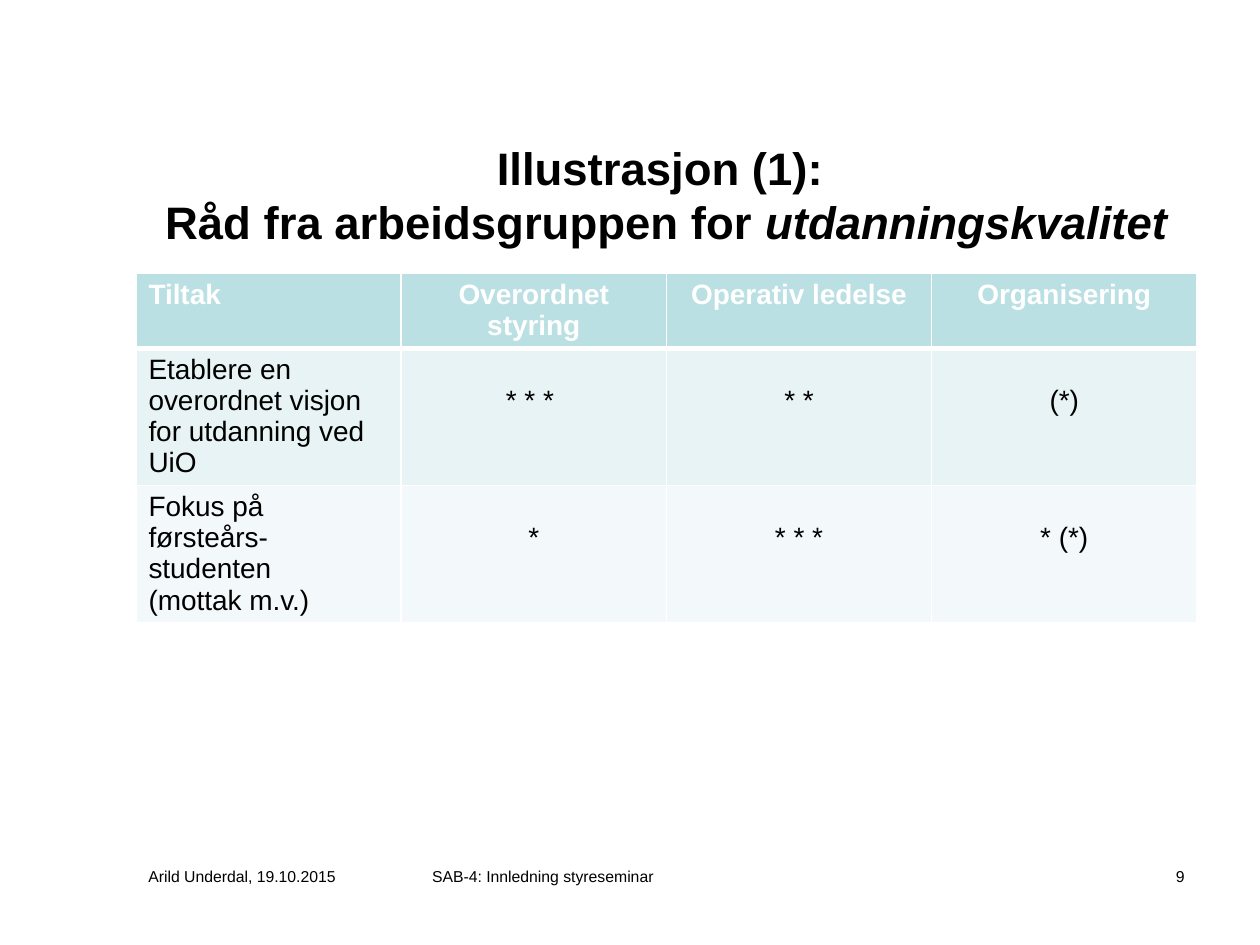
from dataclasses import dataclass

from lxml.etree import SubElement
from pptx import Presentation
from pptx.dml.color import RGBColor
from pptx.enum.text import MSO_ANCHOR, MSO_AUTO_SIZE, PP_ALIGN
from pptx.oxml.ns import qn
from pptx.slide import Slide
from pptx.table import _Cell
from pptx.text.text import _Paragraph
from pptx.util import Cm, Pt


@dataclass(frozen=True)
class Theme:
    font: str = "Arial"
    text: str = "000000"
    white: str = "FFFFFF"
    header: str = "BBE0E3"
    bands: tuple[str, str] = ("E7F3F4", "F3F9FA")
    title_size: int = 26
    table_size: int = 16
    footer_size: int = 9
    thin_border: int = 1
    thick_border: int = 3


@dataclass(frozen=True)
class FooterItem:
    text: str
    left: float
    width: float
    alignment: PP_ALIGN = PP_ALIGN.LEFT


@dataclass(frozen=True)
class Measure:
    name: str
    ratings: tuple[str, str, str]


THEME = Theme()
LEFT = 2.74
WIDTH = 21.39
HEADINGS = ("Tiltak", "Overordnet styring", "Operativ ledelse", "Organisering")
MEASURES = (
    Measure("Etablere en overordnet visjon for utdanning ved UiO", ("* * * ", "* *", "(*)")),
    Measure("Fokus på førsteårs-studenten\n(mottak m.v.)", ("*", "* * *", "* (*)")),
)
FOOTER = (
    FooterItem("Arild Underdal, 19.10.2015", LEFT, 5.28),
    FooterItem("SAB-4: Innledning styreseminar", 8.46, 13.34),
    FooterItem("9", 22.23, 1.9, PP_ALIGN.RIGHT),
)


def add_run(
    paragraph: _Paragraph,
    text: str,
    size: int,
    color: str = THEME.text,
    bold: bool = False,
    italic: bool = False,
) -> None:
    run = paragraph.add_run()
    run.text = text
    run.font.name = THEME.font
    run.font.size = Pt(size)
    run.font.bold = bold
    run.font.italic = italic
    run.font.color.rgb = RGBColor.from_string(color)


def add_title(slide: Slide) -> None:
    title = slide.shapes.title
    title.left, title.top, title.width, title.height = Cm(LEFT), Cm(2.33), Cm(WIDTH), Cm(3.18)
    frame = title.text_frame
    frame.auto_size = MSO_AUTO_SIZE.NONE
    frame.vertical_anchor = MSO_ANCHOR.MIDDLE
    paragraph = frame.paragraphs[0]
    paragraph.alignment = PP_ALIGN.CENTER
    add_run(paragraph, "Illustrasjon (1): ", THEME.title_size, bold=True)
    paragraph.add_line_break()
    add_run(paragraph, "Råd fra arbeidsgruppen for ", THEME.title_size, bold=True)
    add_run(paragraph, "utdanningskvalitet", THEME.title_size, bold=True, italic=True)


def set_borders(cell: _Cell, top: int, bottom: int) -> None:
    properties = cell._tc.get_or_add_tcPr()
    widths = {"a:lnL": THEME.thin_border, "a:lnR": THEME.thin_border, "a:lnT": top, "a:lnB": bottom}
    for position, (tag, width) in enumerate(widths.items()):
        line = SubElement(properties, qn(tag), w=str(Pt(width)))
        fill = SubElement(line, qn("a:solidFill"))
        SubElement(fill, qn("a:srgbClr"), val=THEME.white)
        properties.insert(position, line)


def fill_cell(cell: _Cell, text: str, row: int, column: int) -> None:
    is_header = row == 0
    cell.fill.solid()
    background = THEME.header if is_header else THEME.bands[(row - 1) % 2]
    cell.fill.fore_color.rgb = RGBColor.from_string(background)
    set_borders(
        cell,
        top=THEME.thick_border if row == 1 else THEME.thin_border,
        bottom=THEME.thick_border if is_header else THEME.thin_border,
    )
    if not is_header and column > 0:
        cell.margin_top = Cm(0.75)
    paragraph = cell.text_frame.paragraphs[0]
    paragraph.alignment = PP_ALIGN.CENTER if column else PP_ALIGN.LEFT
    color = THEME.white if is_header else THEME.text
    for index, line in enumerate(text.split("\n")):
        if index:
            paragraph.add_line_break()
        add_run(paragraph, line, THEME.table_size, color, bold=is_header)


def add_measures_table(slide: Slide) -> None:
    rows = [HEADINGS, *((measure.name, *measure.ratings) for measure in MEASURES)]
    heights = (1.5, 2.75, 2.75)
    shape = slide.shapes.add_table(
        len(rows), len(HEADINGS), Cm(LEFT), Cm(5.51), Cm(WIDTH), Cm(sum(heights))
    )
    table = shape.table
    for row, (texts, height) in enumerate(zip(rows, heights)):
        table.rows[row].height = Cm(height)
        for column, text in enumerate(texts):
            fill_cell(table.cell(row, column), text, row, column)


def add_footer_item(slide: Slide, item: FooterItem) -> None:
    box = slide.shapes.add_textbox(Cm(item.left), Cm(17.35), Cm(item.width), Cm(1.27))
    box.text_frame.word_wrap = True
    paragraph = box.text_frame.paragraphs[0]
    paragraph.alignment = item.alignment
    add_run(paragraph, item.text, THEME.footer_size)


def main() -> None:
    presentation = Presentation()
    presentation.slide_width, presentation.slide_height = Cm(25.4), Cm(19.05)
    slide = presentation.slides.add_slide(presentation.slide_layouts[5])
    add_title(slide)
    add_measures_table(slide)
    for item in FOOTER:
        add_footer_item(slide, item)
    presentation.save("out.pptx")


if __name__ == "__main__":
    main()
